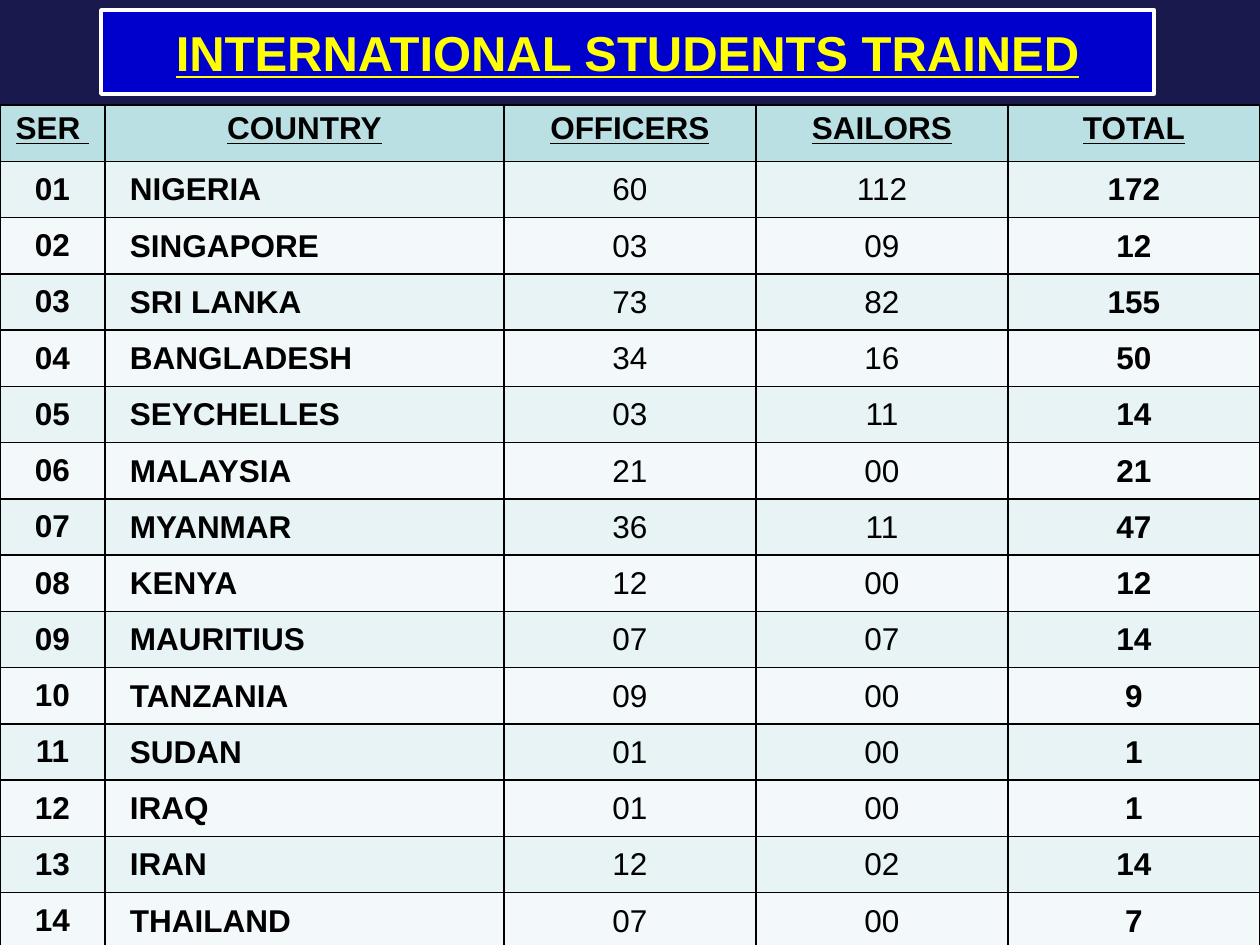
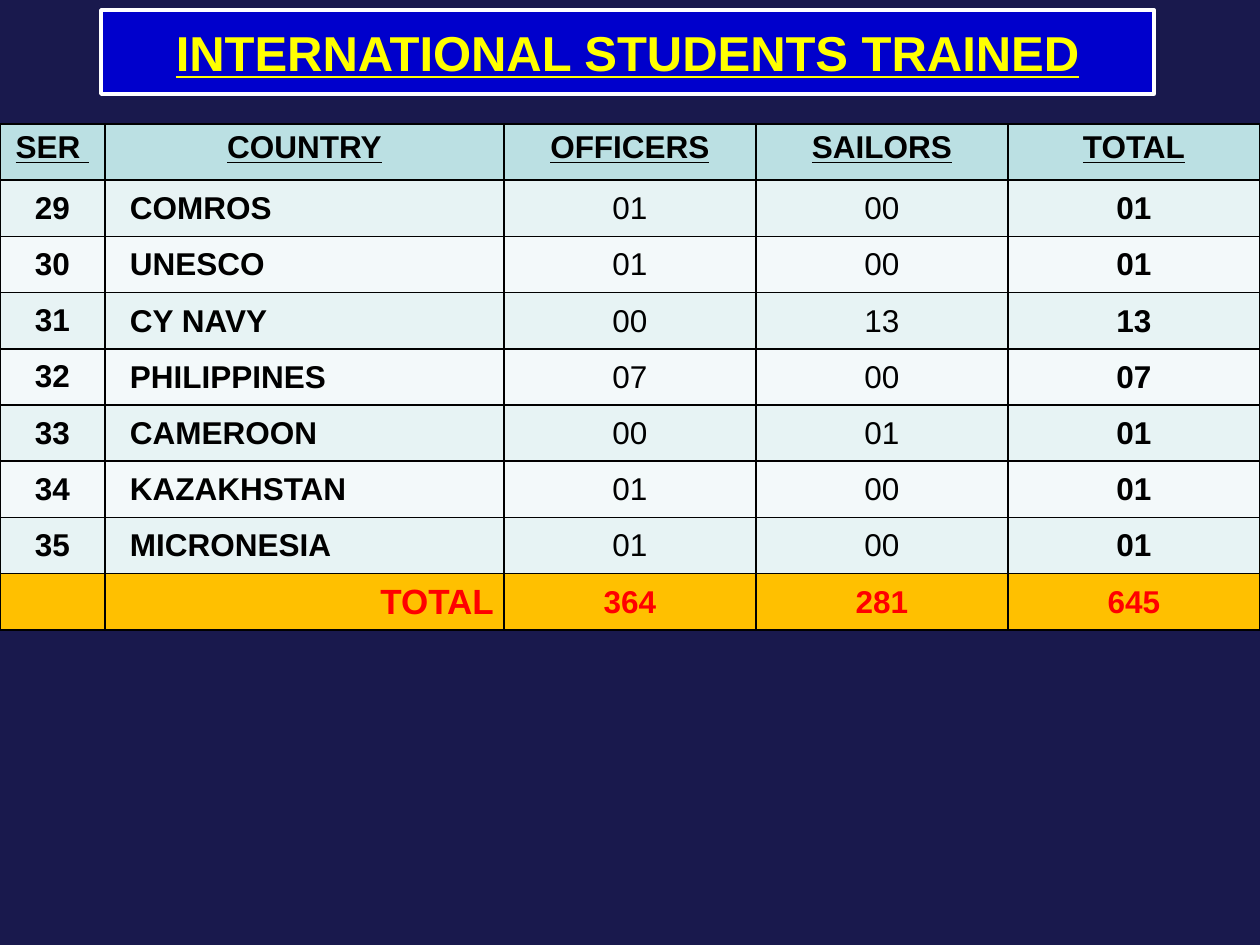
from lxml import etree
from pptx import Presentation
from pptx.dml.color import RGBColor
from pptx.enum.text import MSO_ANCHOR, MSO_AUTO_SIZE, PP_ALIGN
from pptx.oxml.ns import qn
from pptx.util import Emu, Pt

CENTER, LEFT, RIGHT = PP_ALIGN.CENTER, PP_ALIGN.LEFT, PP_ALIGN.RIGHT
TOP, MIDDLE = MSO_ANCHOR.TOP, MSO_ANCHOR.MIDDLE
NO_AUTOFIT = MSO_AUTO_SIZE.NONE

PX_PER_INCH = 126
SLIDE_WIDTH, SLIDE_HEIGHT = 1260, 945
FONT = "Arial"
NAVY, BLUE, WHITE, YELLOW = "19194D", "0000CC", "FFFFFF", "FFFF00"
BLACK, RED, GOLD = "000000", "FF0000", "FFC000"
HEADER_FILL = "BBE0E3"
BAND_FILLS = ("E7F3F4", "F3F9FA")

TITLE = "INTERNATIONAL STUDENTS TRAINED"
HEADINGS = ("SER ", "COUNTRY", "OFFICERS", "SAILORS", "TOTAL")
COLUMN_WIDTHS = (105, 399, 252, 252, 252)

FIRST_COUNTRIES = (
    ("NIGERIA", "60", "112", "172"),
    ("SINGAPORE", "03", "09", "12"),
    ("SRI LANKA", "73", "82", "155"),
    ("BANGLADESH", "34", "16", "50"),
    ("SEYCHELLES", "03", "11", "14"),
    ("MALAYSIA", "21", "00", "21"),
    ("MYANMAR", "36", "11", "47"),
    ("KENYA", "12", "00", "12"),
    ("MAURITIUS", "07", "07", "14"),
    ("TANZANIA", "09", "00", "9"),
    ("SUDAN", "01", "00", "1"),
    ("IRAQ", "01", "00", "1"),
    ("IRAN", "12", "02", "14"),
    ("THAILAND", "07", "00", "7"),
)
LAST_COUNTRIES = (
    ("COMROS", "01", "00", "01"),
    ("UNESCO", "01", "00", "01"),
    ("CY NAVY", "00", "13", "13"),
    ("PHILIPPINES", "07", "00", "07"),
    ("CAMEROON", "00", "01", "01"),
    ("KAZAKHSTAN", "01", "00", "01"),
    ("MICRONESIA", "01", "00", "01"),
)
GRAND_TOTAL = ("TOTAL ", "364", "281", "645")


def px(length):
    """Turn px into EMU."""
    return Emu(round(length * 914400 / PX_PER_INCH))


def paint(fill, color):
    """Give a fill one solid colour."""
    fill.solid()
    fill.fore_color.rgb = RGBColor.from_string(color)


def add_span(para, text, size=18, color=BLACK, bold=True, underline=False):
    """Add one formatted run to a paragraph."""
    span = para.add_run()
    span.text = text
    font = span.font
    font.name, font.size = FONT, Pt(size)
    font.bold, font.underline = bold, underline
    font.color.rgb = RGBColor.from_string(color)


def round_corners(box, adjustment):
    """Give a placeholder a rounded rectangle outline."""
    geometry = etree.Element(qn("a:prstGeom"), prst="roundRect")
    guides = etree.SubElement(geometry, qn("a:avLst"))
    etree.SubElement(guides, qn("a:gd"), name="adj", fmla=f"val {adjustment}")
    box.element.spPr.find(qn("a:xfrm")).addnext(geometry)


def add_title(page):
    """Turn the title placeholder into the blue title plate."""
    box = page.shapes.title
    box.left, box.top, box.width, box.height = map(px, (101, 10, 1053, 84))
    round_corners(box, 10000)
    paint(box.fill, BLUE)
    paint(box.line.fill, WHITE)
    box.line.width = Pt(2)
    frame = box.text_frame
    frame.word_wrap, frame.auto_size = True, NO_AUTOFIT
    frame.vertical_anchor = MIDDLE
    para = frame.paragraphs[0]
    para.alignment = CENTER
    add_span(para, TITLE, size=28, color=YELLOW, underline=True)


def add_borders(cell):
    """Draw a thin black line on all four sides of a cell."""
    properties = cell._tc.get_or_add_tcPr()
    for position, side in enumerate(("lnL", "lnR", "lnT", "lnB")):
        line = etree.Element(qn(f"a:{side}"), w=str(Pt(1)))
        solid = etree.SubElement(line, qn("a:solidFill"))
        etree.SubElement(solid, qn("a:srgbClr"), val=BLACK)
        properties.insert(position, line)


def fill_cell(cell, text, fill, anchor=MIDDLE, align=CENTER, indent=0,
              tight=False, **style):
    """Set the fill, borders, margins and text of a cell."""
    paint(cell.fill, fill)
    add_borders(cell)
    cell.vertical_anchor = anchor
    if tight:
        cell.margin_left = cell.margin_right = cell.margin_top = px(1)
        cell.margin_bottom = 0
    para = cell.text_frame.paragraphs[0]
    para.alignment = align
    if indent:
        para._p.get_or_add_pPr().set("marL", str(px(indent)))
    if text:
        add_span(para, text, **style)


def fill_country_row(cells, serial, record, fill):
    """Write the serial number, country and counts of one row."""
    country, officers, sailors, total = record
    fill_cell(cells[0], f"{serial:02d}", fill)
    fill_cell(cells[1], country, fill, align=LEFT, indent=24, tight=True)
    for cell, count in zip(cells[2:4], (officers, sailors)):
        fill_cell(cell, count, fill, tight=True, bold=False)
    fill_cell(cells[4], total, fill, tight=True)


def fill_total_row(cells):
    """Write the closing row of grand totals."""
    label, *sums = GRAND_TOTAL
    fill_cell(cells[0], "", GOLD)
    fill_cell(cells[1], label, GOLD, align=RIGHT, indent=9, tight=True,
              size=20, color=RED)
    for cell, value in zip(cells[2:], sums):
        fill_cell(cell, value, GOLD, tight=True, color=RED)


def add_country_table(page, top, height, first_serial, records, closing=False):
    """Add a table of countries, with a closing total row if wanted."""
    row_count = 1 + len(records) + closing
    frame = page.shapes.add_table(row_count, len(HEADINGS), 0, px(top),
                                  px(SLIDE_WIDTH), px(height))
    table = frame.table
    table.horz_banding = False
    for column, width in zip(table.columns, COLUMN_WIDTHS):
        column.width = px(width)
    rows = [list(row.cells) for row in table.rows]
    for cell, heading in zip(rows[0], HEADINGS):
        fill_cell(cell, heading, HEADER_FILL, anchor=TOP, underline=True)
    for index, record in enumerate(records):
        fill_country_row(rows[index + 1], first_serial + index, record,
                         BAND_FILLS[index % 2])
    if closing:
        fill_total_row(rows[-1])


def add_page(deck):
    """Add a slide with the shared title plate."""
    page = deck.slides.add_slide(deck.slide_layouts.get_by_name("Title Only"))
    add_title(page)
    return page


def main():
    """Build and save the deck."""
    deck = Presentation()
    deck.slide_width, deck.slide_height = px(SLIDE_WIDTH), px(SLIDE_HEIGHT)
    paint(deck.slide_master.background.fill, NAVY)
    add_country_table(add_page(deck), 105, 844, 1, FIRST_COUNTRIES)
    add_country_table(add_page(deck), 124, 506, 29, LAST_COUNTRIES, closing=True)
    deck.save("out.pptx")


if __name__ == "__main__":
    main()
